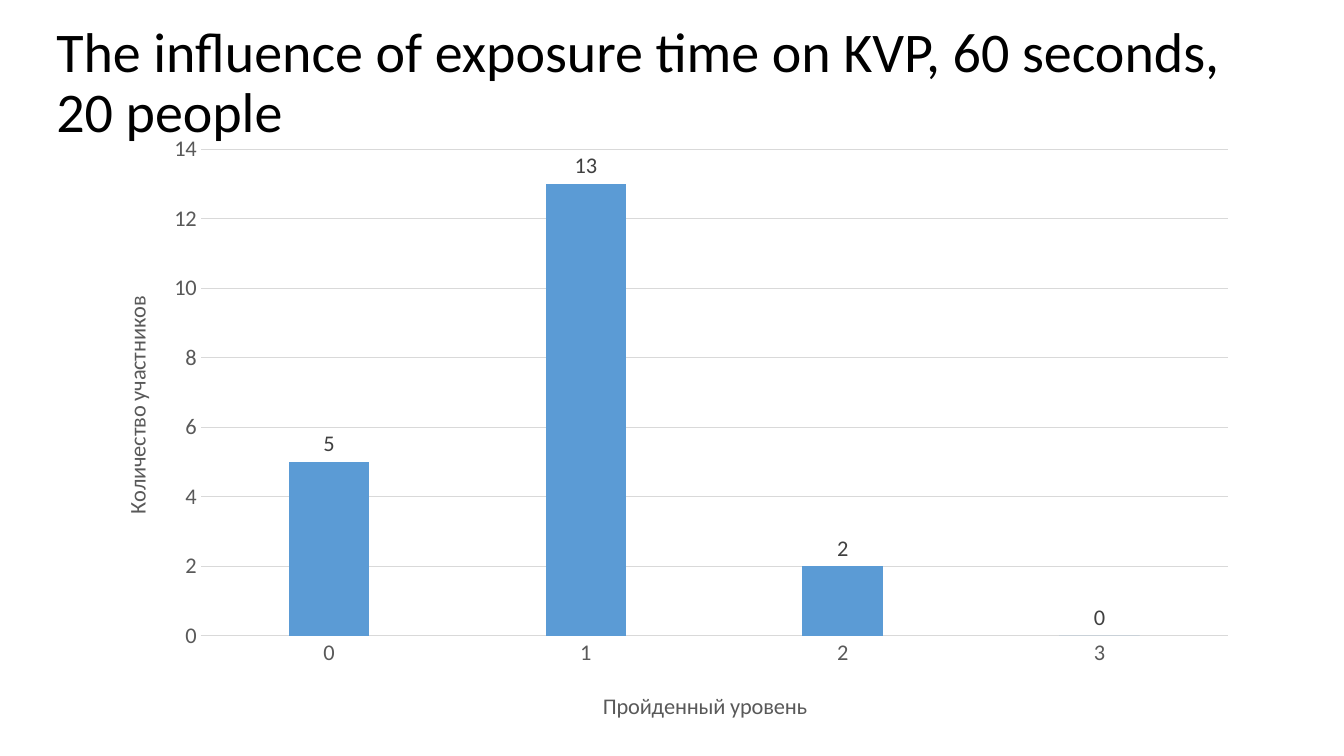
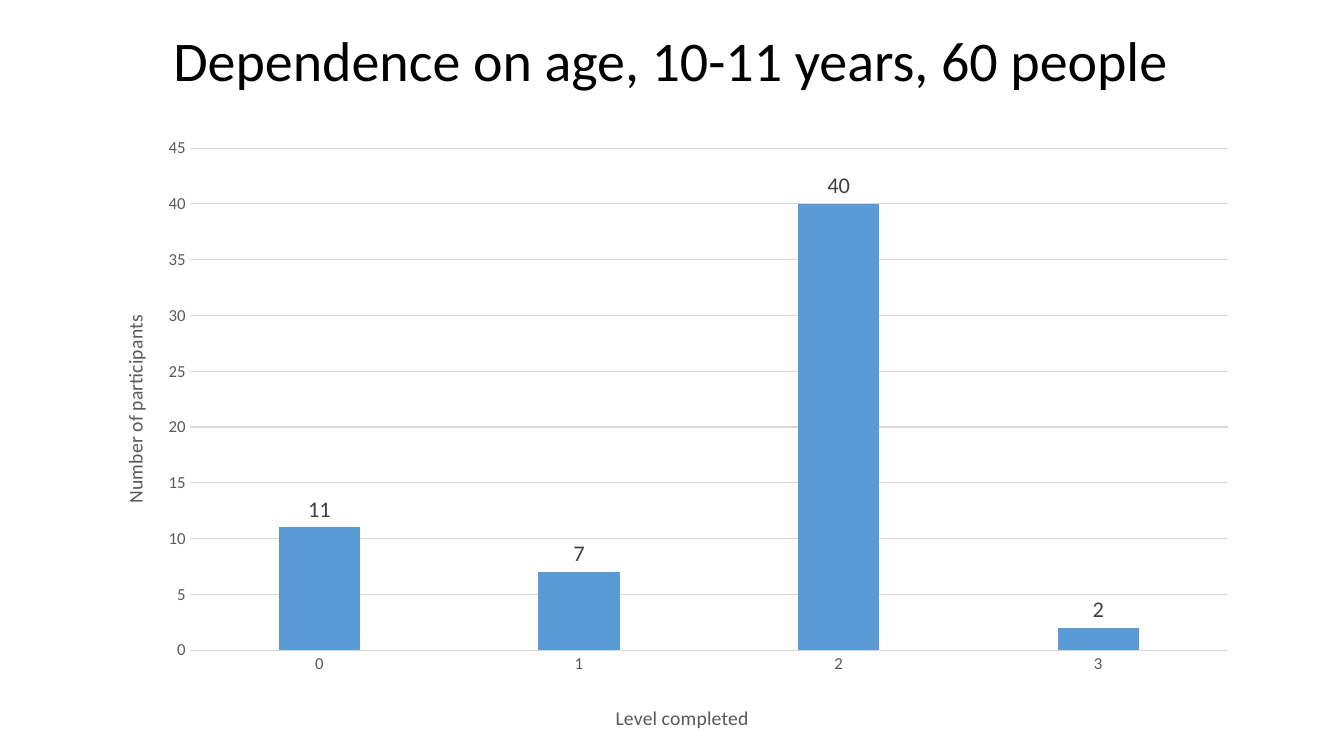
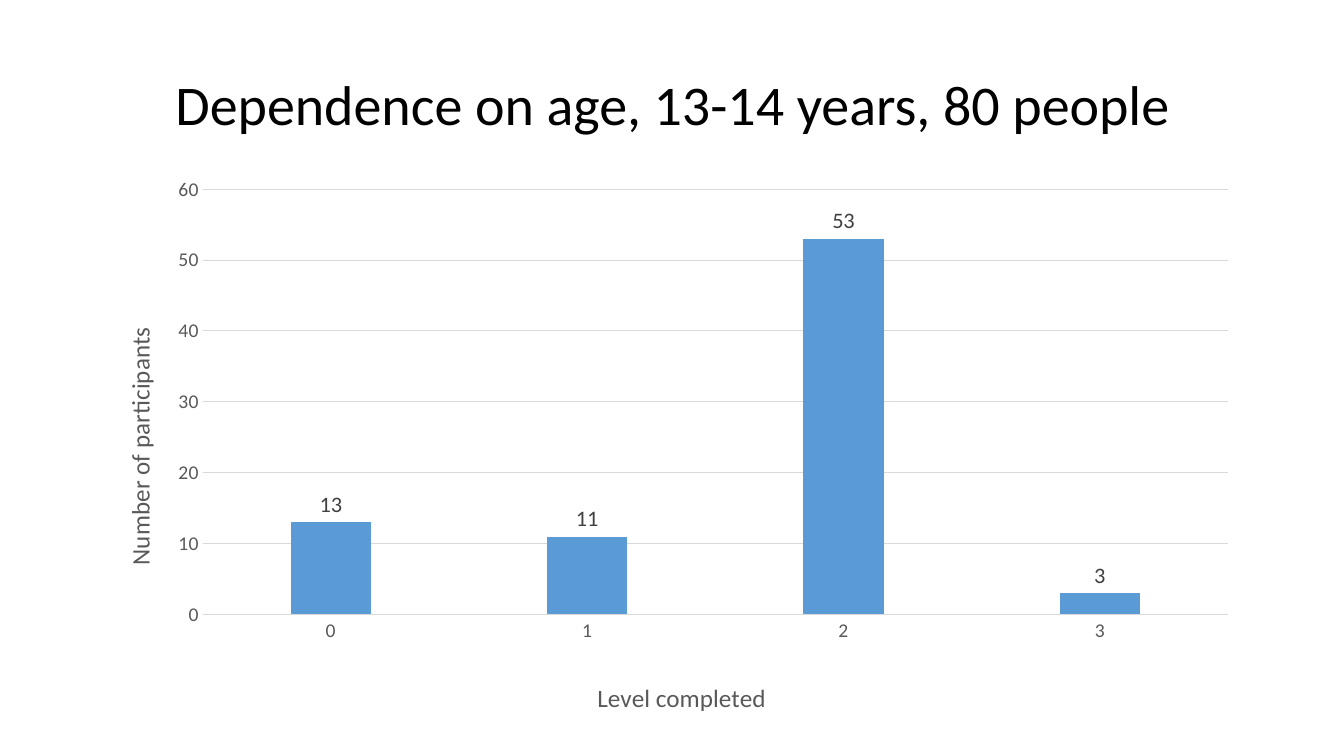
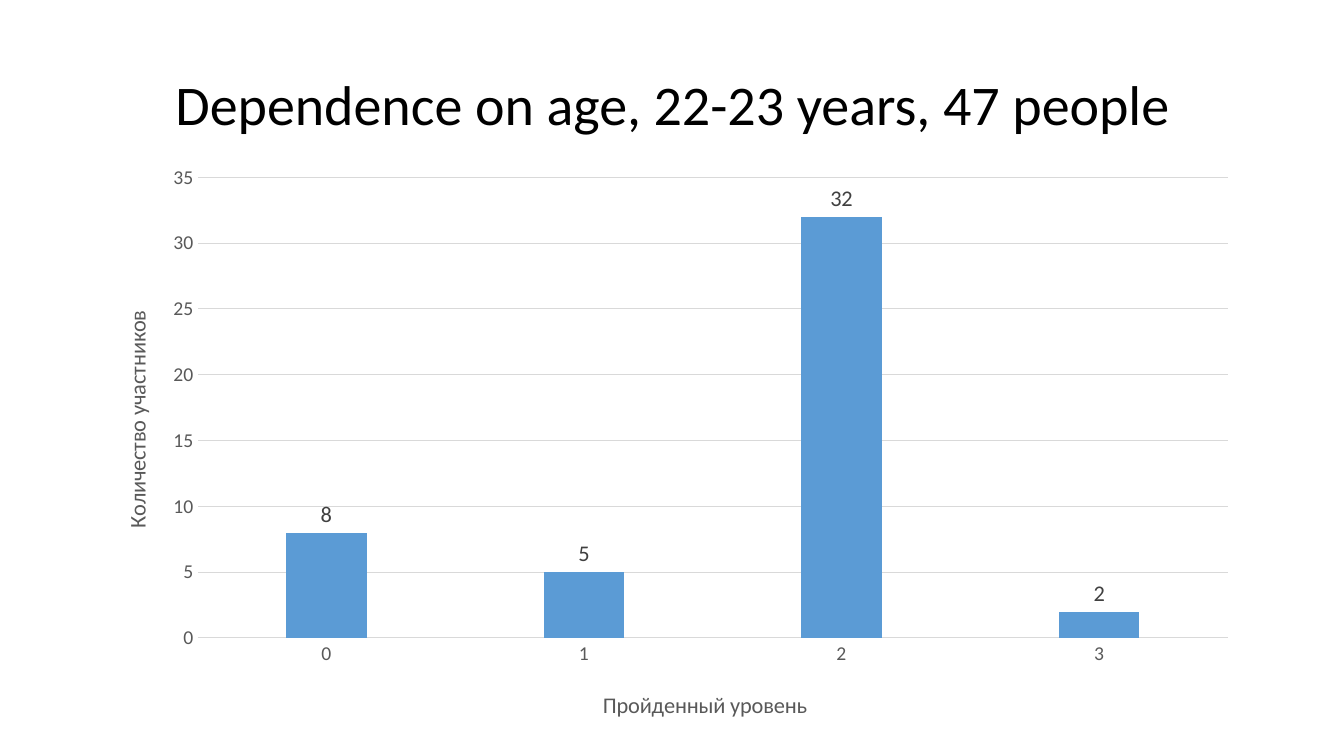
from dataclasses import dataclass

from pptx import Presentation
from pptx import util as u
from pptx.chart import data as chart_data
from pptx.dml import color
from pptx.enum import chart as kinds, text
from pptx.oxml import parse_xml
from pptx.oxml import ns


@dataclass(frozen=True)
class Theme:
    font: str = "Calibri"
    ink: str = "000000"
    axis: str = "595959"
    label: str = "404040"
    grid: str = "D9D9D9"
    bar: str = "5B9BD5"
    heading_size: int = 40
    label_size: int = 16
    rule: float = 0.75


THEME = Theme()
LEVELS = ("0", "1", "2", "3")
ENGLISH = ("Level completed", "Number of participants")
RUSSIAN = ("Пройденный уровень", "Количество участников")
CHART_LEFT, CHART_WIDTH = 0.92, 11.5
PLOT_RIGHT = 12.18
VALUE_TITLE_LEFT = 1.17

RESULTS = [
    dict(heading="The influence of exposure time on KVP, 60 seconds, 20 people",
         heading_box=(0.46, 0.11, 12.08, 1.45), align="LEFT",
         participants=(5, 13, 2, 0), scale=(14, 2), axis_titles=RUSSIAN,
         title_size=16, tick_size=16, chart_y=(1.22, 6.1),
         plot=(1.99, 1.48, 6.31), level_at=(5.94, 6.81), count_top=2.9),
    dict(heading="Dependence on age, 10-11 years, 60 people",
         heading_box=(0.9, 0, 11.5, 1.25), align="CENTER",
         participants=(11, 7, 40, 2), scale=(45, 5), axis_titles=ENGLISH,
         title_size=14, tick_size=12, chart_y=(1.25, 6.08),
         plot=(1.88, 1.47, 6.45), level_at=(6.07, 6.95), count_top=3.09),
    dict(heading="Dependence on age, 13-14 years, 80 people",
         heading_box=(0.92, 0.34, 11.5, 1.45), align="CENTER",
         participants=(13, 11, 53, 3), scale=(60, 10), axis_titles=ENGLISH,
         title_size=18, tick_size=14, chart_y=(1.65, 5.51),
         plot=(2.01, 1.88, 6.14), level_at=(5.88, 6.76), count_top=3.24),
    dict(heading="Dependence on age, 22-23 years, 47 people",
         heading_box=(0.92, 0.34, 11.5, 1.45), align="CENTER",
         participants=(8, 5, 32, 2), scale=(35, 5), axis_titles=RUSSIAN,
         title_size=16, tick_size=14, chart_y=(1.52, 5.78),
         plot=(1.96, 1.76, 6.33), level_at=(5.94, 6.8), count_top=3.04),
]


def rgb(value):
    return color.RGBColor.from_string(value)


def style_font(font, size, ink):
    font.name, font.size, font.bold = THEME.font, u.Pt(size), False
    font.color.rgb = rgb(ink)


def write(frame, words, size, ink, align="CENTER", spacing=None):
    paragraph = frame.paragraphs[0]
    paragraph.alignment = getattr(text.PP_ALIGN, align)
    paragraph.line_spacing = spacing
    run = paragraph.add_run()
    run.text = words
    style_font(run.font, size, ink)


def draw_rule(line):
    line.color.rgb = rgb(THEME.grid)
    line.width = u.Pt(THEME.rule)


def place(owner, index, chart_y, left, top, size=None):
    for layout in owner.xpath("c:layout"):
        owner.remove(layout)
    chart_top, chart_height = chart_y
    parts = {"x": (left - CHART_LEFT) / CHART_WIDTH,
             "y": (top - chart_top) / chart_height}
    target = ""
    if size:
        target = '<c:layoutTarget val="inner"/>'
        parts.update(w=size[0] / CHART_WIDTH, h=size[1] / chart_height)
    modes = "".join(f'<c:{key}Mode val="edge"/>' for key in "xy")
    values = "".join(f'<c:{key} val="{value:.4f}"/>' for key, value in parts.items())
    owner.insert(index, parse_xml(
        f'<c:layout {ns.nsdecls("c")}><c:manualLayout>{target}{modes}{values}'
        '</c:manualLayout></c:layout>'))


def style_axis(axis, words, result):
    axis.major_tick_mark = axis.minor_tick_mark = kinds.XL_TICK_MARK.NONE
    style_font(axis.tick_labels.font, result["tick_size"], THEME.axis)
    write(axis.axis_title.text_frame, words, result["title_size"], THEME.axis)


def add_heading(slide, result):
    box = slide.shapes.add_textbox(*map(u.Inches, result["heading_box"]))
    box.text_frame.word_wrap = True
    box.text_frame.vertical_anchor = text.MSO_ANCHOR.MIDDLE
    write(box.text_frame, result["heading"], THEME.heading_size, THEME.ink,
          result["align"], spacing=0.9)


def add_results(slide, result):
    counts = chart_data.CategoryChartData()
    counts.categories = LEVELS
    counts.add_series("Series 1", result["participants"])
    chart_y = result["chart_y"]
    area = (CHART_LEFT, chart_y[0], CHART_WIDTH, chart_y[1])
    chart = slide.shapes.add_chart(
        kinds.XL_CHART_TYPE.COLUMN_CLUSTERED, *map(u.Inches, area), counts).chart
    chart.has_title = chart.has_legend = False
    style_font(chart.font, result["tick_size"], THEME.ink)

    levels, participants = chart.category_axis, chart.value_axis
    for axis, words in zip((levels, participants), result["axis_titles"]):
        style_axis(axis, words, result)
    draw_rule(levels.format.line)
    participants.format.line.fill.background()
    draw_rule(participants.major_gridlines.format.line)
    participants.minimum_scale = 0
    participants.maximum_scale, participants.major_unit = result["scale"]

    bars = chart.plots[0]
    bars.gap_width, bars.overlap, bars.vary_by_categories = 219, -27, False
    fill = bars.series[0].format.fill
    fill.solid()
    fill.fore_color.rgb = rgb(THEME.bar)
    bars.has_data_labels = True
    labels = bars.data_labels
    labels.show_value = True
    labels.position = kinds.XL_LABEL_POSITION.OUTSIDE_END
    style_font(labels.font, THEME.label_size, THEME.label)

    left, top, bottom = result["plot"]
    find = chart.element.xpath
    place(find(".//c:plotArea")[0], 0, chart_y, left, top,
          (PLOT_RIGHT - left, bottom - top))
    place(find(".//c:catAx/c:title")[0], 1, chart_y, *result["level_at"])
    place(find(".//c:valAx/c:title")[0], 1, chart_y,
          VALUE_TITLE_LEFT, result["count_top"])
    find(".//c:valAx/c:title//a:bodyPr")[0].set("rot", "-5400000")


def main():
    deck = Presentation()
    deck.slide_width, deck.slide_height = u.Inches(13.33), u.Inches(7.5)
    for result in RESULTS:
        slide = deck.slides.add_slide(deck.slide_layouts[6])
        add_heading(slide, result)
        add_results(slide, result)
    deck.save("out.pptx")


if __name__ == "__main__":
    main()
